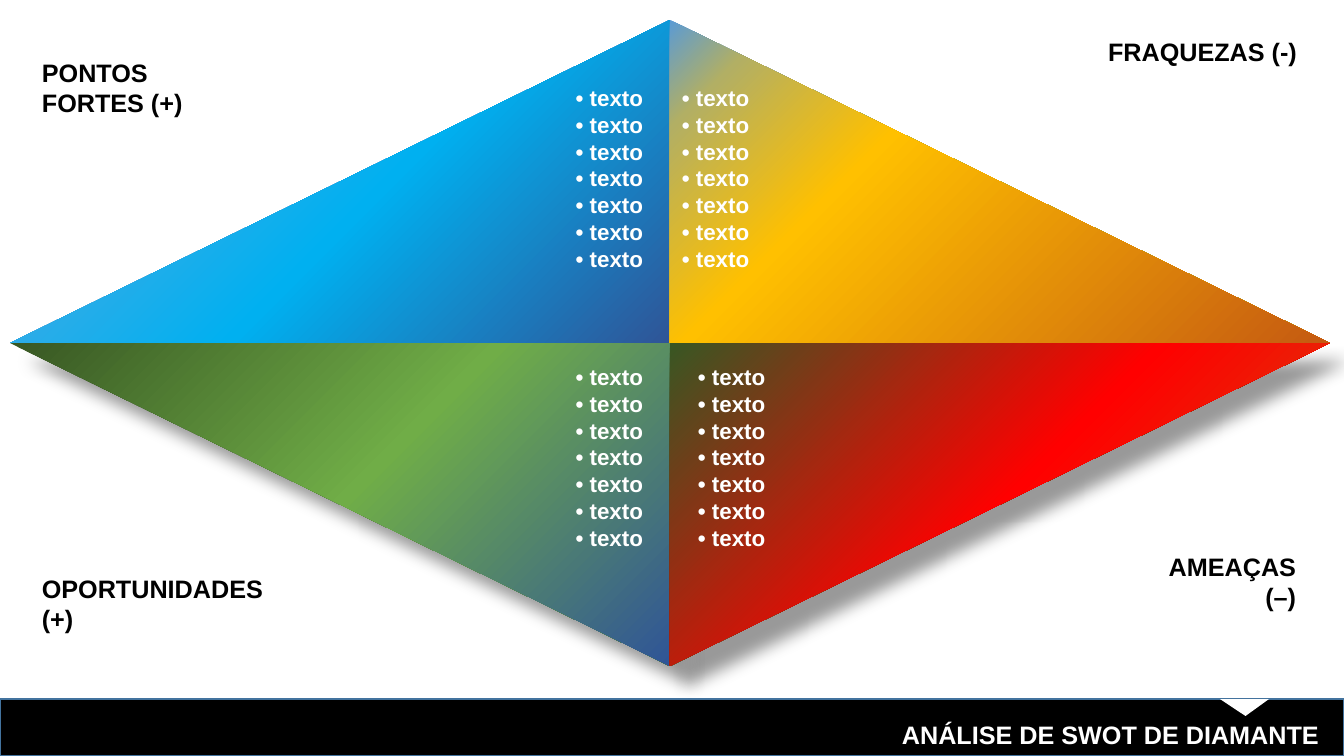
from lxml import etree
from pptx import Presentation
from pptx.dml.color import RGBColor
from pptx.enum.shapes import MSO_SHAPE
from pptx.enum.text import PP_ALIGN
from pptx.oxml.ns import qn
from pptx.util import Pt

EMU_PER_PX = 914400 / 100.8
LEFT, RIGHT = PP_ALIGN.LEFT, PP_ALIGN.RIGHT
RECTANGLE, TRIANGLE = MSO_SHAPE.RECTANGLE, MSO_SHAPE.ISOSCELES_TRIANGLE
WIDTH, HEIGHT = 1344, 756
BAR_TOP = 699
CENTER_X, CENTER_Y = 670, 343
HALF_WIDTH, HALF_HEIGHT = 660, 323
WHITE, BLACK = "FFFFFF", "000000"

# Horizontal side, vertical side, gradient stops, shadow
QUADRANTS = [
    (-1, 1, [(0, "385723"), (50, "70AD47"), (100, "2F5597")], True),
    (-1, -1, [(0, "71A6DB"), (55, "00B0F0"), (100, "2F5597")], False),
    (1, 1, [(0, "385723"), (50, "FF0000"), (100, "C55A11")], True),
    (1, -1, [(0, "5B9BD5"), (11, "B2AF64"), (34, "FFC000"), (100, "C55A11")], False),
]
LABELS = [
    (["PONTOS FORTES (+)"], (32, 52, 198, 72), LEFT),
    (["OPORTUNIDADES", "(+)"], (32, 568, 252, 72), LEFT),
    (["FRAQUEZAS (-)"], (1080, 31, 227, 72), RIGHT),
    (["AMEAÇAS", "(–)"], (1054, 546, 252, 72), RIGHT),
]
LISTS = [
    ((158, 79, 495, 248), RIGHT),
    ((194, 358, 459, 224), RIGHT),
    ((688, 358, 459, 224), LEFT),
    ((672, 79, 459, 224), LEFT),
]


def px(value):
    return round(value * EMU_PER_PX)


def color(value):
    return RGBColor.from_string(value)


def add_block(slide, kind, box, fill):
    shape = slide.shapes.add_shape(kind, *map(px, box))
    shape.shadow.inherit = False
    shape.fill.solid()
    shape.fill.fore_color.rgb = color(fill)
    shape.line.fill.background()
    return shape


def add_text(slide, lines, box, size, font_color, alignment):
    frame = slide.shapes.add_textbox(*map(px, box)).text_frame
    frame.word_wrap = True
    font_format = {"name": "Arial", "size": Pt(size), "bold": True}
    for index, line in enumerate(lines):
        paragraph = frame.paragraphs[0] if index == 0 else frame.add_paragraph()
        paragraph.alignment = alignment
        run = paragraph.add_run()
        run.text = line
        for name, value in font_format.items():
            setattr(run.font, name, value)
        run.font.color.rgb = color(font_color)


def set_gradient(shape, stops):
    """Fill the shape with a diagonal gradient running down to the right."""
    shape.fill.gradient()
    shape.fill.gradient_angle = 315
    stop_list = shape._element.spPr.find(qn("a:gradFill")).find(qn("a:gsLst"))
    for old_stop in list(stop_list):
        stop_list.remove(old_stop)
    for position, value in stops:
        stop = etree.SubElement(stop_list, qn("a:gs"), pos=str(position * 1000))
        etree.SubElement(stop, qn("a:srgbClr"), val=value)


def add_shadow(shape):
    """Cast a soft shadow down to the right."""
    effects = shape._element.spPr.find(qn("a:effectLst"))
    shadow = etree.SubElement(
        effects, qn("a:outerShdw"), blurRad=str(Pt(12)), dist=str(Pt(19)),
        dir="2700000", algn="tl", rotWithShape="0")
    shadow_color = etree.SubElement(shadow, qn("a:srgbClr"), val=BLACK)
    etree.SubElement(shadow_color, qn("a:alpha"), val="40000")


def add_quadrant(slide, side_x, side_y, stops, has_shadow):
    tip = (CENTER_X, CENTER_Y + side_y * HALF_HEIGHT)
    side = (CENTER_X + side_x * HALF_WIDTH, CENTER_Y)
    builder = slide.shapes.build_freeform(*tip, scale=EMU_PER_PX)
    builder.add_line_segments([side, (CENTER_X, CENTER_Y)], close=True)
    shape = builder.convert_to_shape()
    shape.shadow.inherit = False
    shape.line.fill.background()
    set_gradient(shape, stops)
    if has_shadow:
        add_shadow(shape)


def add_footer(slide):
    bar = add_block(slide, RECTANGLE, (0, BAR_TOP, WIDTH, HEIGHT - BAR_TOP), BLACK)
    bar.line.color.rgb = color("43739E")
    bar.line.width = Pt(1)
    notch = add_block(slide, TRIANGLE, (1220, BAR_TOP, 49, 17), WHITE)
    notch.rotation = 180
    notch.adjustments[0] = 0.48
    add_text(slide, ["ANÁLISE DE SWOT DE DIAMANTE"], (646, 714, 683, 40), 18, WHITE, RIGHT)


def main():
    presentation = Presentation()
    presentation.slide_width = px(WIDTH)
    presentation.slide_height = px(HEIGHT)
    slide = presentation.slides.add_slide(presentation.slide_layouts[6])
    add_footer(slide)
    for lines, box, alignment in LABELS:
        add_text(slide, lines, box, 18, BLACK, alignment)
    for quadrant in QUADRANTS:
        add_quadrant(slide, *quadrant)
    for box, alignment in LISTS:
        add_text(slide, ["• texto"] * 7, box, 16, WHITE, alignment)
    presentation.save("out.pptx")


if __name__ == "__main__":
    main()
